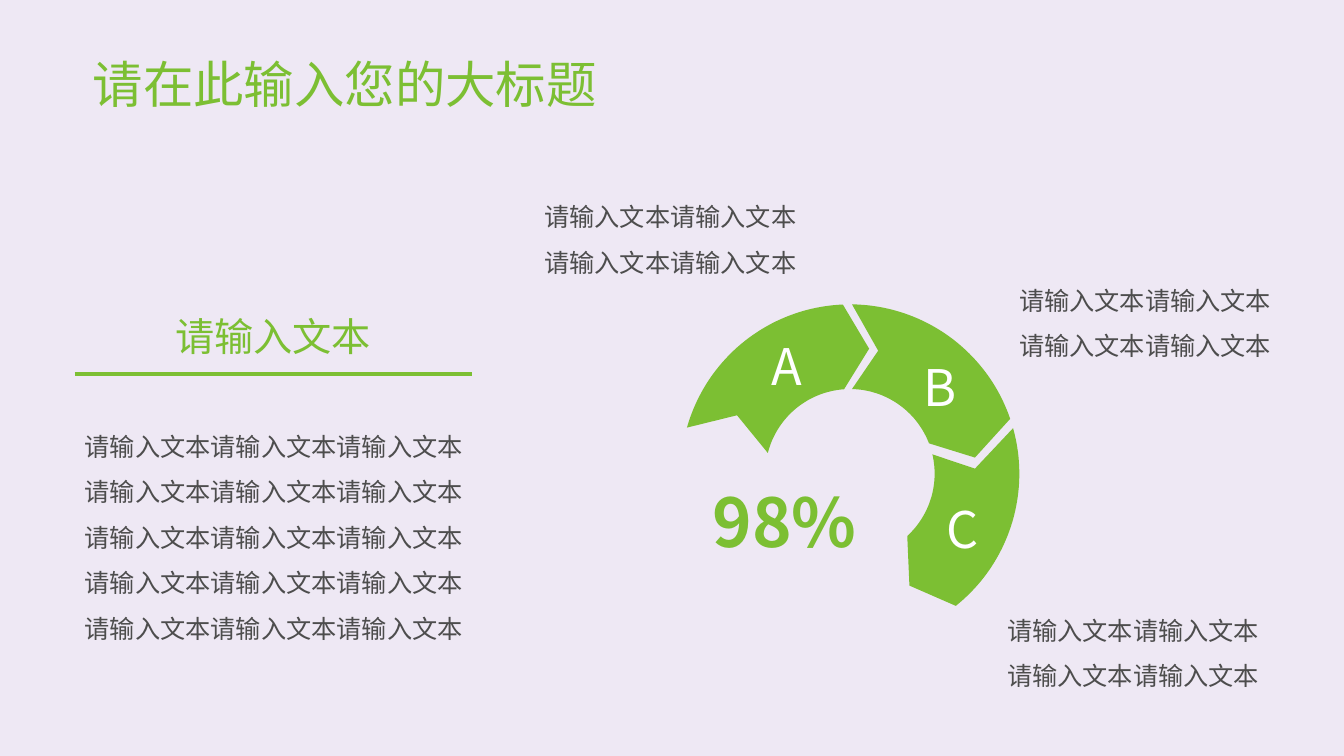
from math import cos, radians, sin

from pptx import Presentation
from pptx.dml.color import RGBColor
from pptx.enum.shapes import MSO_CONNECTOR
from pptx.enum.text import MSO_ANCHOR, PP_ALIGN
from pptx.util import Inches, Pt
from lxml import etree

LEFT, CENTER = PP_ALIGN.LEFT, PP_ALIGN.CENTER
TOP, MIDDLE = MSO_ANCHOR.TOP, MSO_ANCHOR.MIDDLE
STRAIGHT = MSO_CONNECTOR.STRAIGHT

# Content
FONT = "Noto Sans CJK SC"
COLORS = {"background": "EEE8F4", "green": "7CBF33", "gray": "4D4D4D", "white": "FFFFFF"}
PHRASE = "请输入文本"
TITLE = ("请在此输入您的大标题", (0.82, 0.4, 11.31, 0.93))
HEADING = (PHRASE, (0.7, 2.82, 4.02, 0.79))
BODY = (PHRASE * 15, (0.65, 3.98, 4.13, 2.55))
PERCENT = ("98%", (6.33, 4.72, 2.9, 0.91))
RULE = (0.74, 4.68, 3.71)  # left, right, height on the slide

# Ring segments: angles run clockwise in degrees from twelve o'clock
RING_CENTER, OUTER_RADIUS, INNER_RADIUS = (8.43, 4.7), 1.68, 0.84
SEGMENTS = [
    {"letter": "A", "letter_at": (7.15, 3.28), "note_at": (5.3, 1.58),
     "outer": (-74.2, -2.4), "tip": (8.62, 3.46),
     "inner": (-75.8, -4), "notch": (7.31, 4.12)},
    {"letter": "B", "letter_at": (8.67, 3.48), "note_at": (10.01, 2.41),
     "outer": (0.7, 71.1), "tip": (9.67, 4.54),
     "inner": (1.4, 69), "notch": (8.71, 3.48)},
    {"letter": "C", "letter_at": (8.9, 4.89), "note_at": (9.89, 5.68),
     "outer": (74.4, 141.3), "tip": (9.02, 5.81),
     "inner": (76.8, 137.4), "notch": (9.67, 4.65)},
]
LETTER_SIZE, NOTE_SIZE = (1.3, 0.71), (2.76, 1.44)
ARC_STEPS = 40


def rgb(name):
    return RGBColor.from_string(COLORS[name])


def add_text(s, text, box, size, color, align=LEFT, anchor=MIDDLE, spacing=1.0, bold=False):
    tf = s.shapes.add_textbox(*map(Inches, box)).text_frame
    tf.word_wrap = True
    tf.vertical_anchor = anchor
    tf.text = text
    p = tf.paragraphs[0]
    p.alignment = align
    p.line_spacing = spacing
    font = p.runs[0].font
    font.name, font.size, font.bold = FONT, Pt(size), bold
    font.color.rgb = rgb(color)
    r_pr = p.runs[0].font._element
    ea = etree.SubElement(r_pr, r_pr.tag.replace("rPr", "ea"))
    ea.set("typeface", FONT)


def arc(radius, start, end):
    cx, cy = RING_CENTER
    angles = [radians(start + (end - start) * i / ARC_STEPS) for i in range(ARC_STEPS + 1)]
    return [(cx + radius * sin(a), cy - radius * cos(a)) for a in angles]


def add_segment(s, segment):
    points = arc(OUTER_RADIUS, *segment["outer"]) + [segment["tip"]]
    points += arc(INNER_RADIUS, *reversed(segment["inner"])) + [segment["notch"]]
    points = [(Inches(x), Inches(y)) for x, y in points]
    builder = s.shapes.build_freeform(*points[0])
    builder.add_line_segments(points[1:], close=True)
    sp = builder.convert_to_shape()
    sp.shadow.inherit = False
    sp.fill.solid()
    sp.fill.fore_color.rgb = rgb("green")
    sp.line.fill.background()


prs = Presentation()
prs.slide_width, prs.slide_height = Inches(13.33), Inches(7.5)
s = prs.slides.add_slide(prs.slide_layouts[6])
s.background.fill.solid()
s.background.fill.fore_color.rgb = rgb("background")

# Title
add_text(s, *TITLE, 36, "green", spacing=0.9)

# Ring with letters and notes
for segment in SEGMENTS:
    add_segment(s, segment)
for segment in SEGMENTS:
    add_text(s, segment["letter"], segment["letter_at"] + LETTER_SIZE, 36, "white", CENTER, TOP)
    add_text(s, PHRASE * 4, segment["note_at"] + NOTE_SIZE, 18, "gray", spacing=1.5)
add_text(s, *PERCENT, 48, "green", CENTER, TOP, bold=True)

# Left column
x1, x2, y = map(Inches, RULE)
rule = s.shapes.add_connector(STRAIGHT, x1, y, x2, y)
rule.line.color.rgb = rgb("green")
rule.line.width = Pt(3)
sp_pr = rule._element.spPr
etree.SubElement(sp_pr, sp_pr.ln.tag.replace("}ln", "}effectLst"))
add_text(s, *BODY, 18, "gray", CENTER, spacing=1.5)
add_text(s, *HEADING, 28, "green", CENTER, spacing=1.5)

prs.save("out.pptx")
